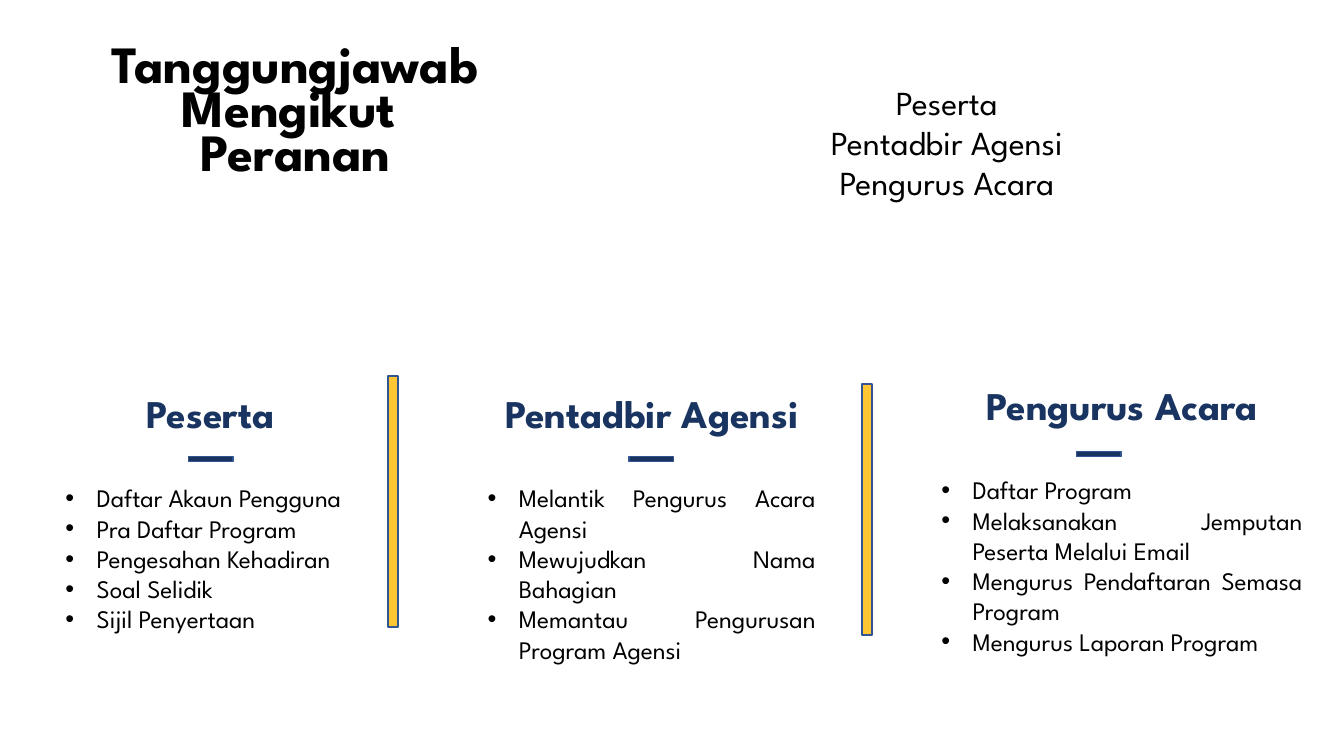
from lxml import etree
from pptx import Presentation
from pptx.dml.color import RGBColor
from pptx.enum.shapes import MSO_SHAPE
from pptx.enum.text import MSO_ANCHOR, PP_ALIGN
from pptx.oxml.ns import qn
from pptx.util import Inches, Pt

RECT = MSO_SHAPE.RECTANGLE
TOP, MIDDLE = MSO_ANCHOR.TOP, MSO_ANCHOR.MIDDLE
CENTER, JUSTIFY = PP_ALIGN.CENTER, PP_ALIGN.JUSTIFY

THEME = {
    "font": "League Spartan",
    "black": RGBColor.from_string("000000"),
    "navy": RGBColor.from_string("193460"),
    "gold": RGBColor.from_string("FFC633"),
    "edge": RGBColor.from_string("325491"),
    "title": Pt(37.4), "heading": Pt(28), "roles": Pt(24), "item": Pt(18),
}
INDENT = Inches(0.31)

prs = Presentation()
prs.slide_width, prs.slide_height = Inches(13.333), Inches(7.5)
s = prs.slides.add_slide(prs.slide_layouts[6])


def place(x, y, w, h):
    """Turn percentages of the slide into left, top, width, height."""
    W, H = prs.slide_width, prs.slide_height
    return [int(v * full / 100) for v, full in ((x, W), (y, H), (w, W), (h, H))]


def add_text(box, lines, anchor=TOP):
    """Add a text box; each line is (text, size, colour, bold, paragraph format)."""
    tf = s.shapes.add_textbox(*place(*box)).text_frame
    tf.word_wrap, tf.vertical_anchor = True, anchor
    for i, (text, size, color, bold, fmt) in enumerate(lines):
        p = tf.paragraphs[0] if i == 0 else tf.add_paragraph()
        for name, value in fmt.items():
            setattr(p, name, value)
        r = p.add_run()
        r.text = text
        for name, value in {"name": THEME["font"], "size": THEME[size], "bold": bold}.items():
            setattr(r.font, name, value)
        r.font.color.rgb = THEME[color]
    return tf


# Title and list of roles
add_text((0, 5.47, 44, 19.33),
         [(t, "title", "black", True, {"alignment": CENTER, "line_spacing": 0.7})
          for t in ("Tanggungjawab", "Mengikut ", "Peranan")], MIDDLE)
add_text((45.45, 10.13, 50, 17.47),
         [(t, "roles", "black", False, {"alignment": CENTER})
          for t in ("Peserta", "Pentadbir Agensi", "Pengurus Acara")])

# Role columns: box, left and top of the dash, heading, duties
columns = [
    ((4.13, 50.8, 23.1, 42.13), (14.03, 60.4), "Peserta",
     ["Daftar Akaun Pengguna", "Pra Daftar Program", "Pengesahan Kehadiran",
      "Soal Selidik", "Sijil Penyertaan"]),
    ((35.55, 50.8, 25.88, 42.13), (46.8, 60.4), "Pentadbir Agensi",
     ["Melantik Pengurus Acara Agensi", "Mewujudkan Nama Bahagian",
      "Memantau Pengurusan Program Agensi"]),
    ((69.3, 49.73, 28.35, 50.27), (80.1, 59.73), "Pengurus Acara",
     ["Daftar Program", "Melaksanakan Jemputan Peserta Melalui Email",
      "Mengurus Pendaftaran Semasa Program", "Mengurus Laporan Program"]),
]
bars = [((28.88, 49.73, 0.75, 33.2), "gold"), ((64.13, 50.8, 0.75, 33.2), "gold")]
for box, dash, heading, duties in columns:
    lines = [(heading, "heading", "navy", True,
              {"alignment": CENTER, "space_after": Pt(33.4)})]
    lines += [(d, "item", "black", False, {"alignment": JUSTIFY}) for d in duties]
    tf = add_text(box, lines)
    for p in tf.paragraphs[1:]:
        pPr = p._p.get_or_add_pPr()
        pPr.set("marL", str(INDENT))
        pPr.set("indent", str(-INDENT))
        etree.SubElement(pPr, qn("a:buFont")).set("typeface", "Arial")
        etree.SubElement(pPr, qn("a:buChar")).set("char", "•")
    bars.append(((*dash, 3.3, 0.67), "navy"))

# Column dividers and heading dashes
for box, color in bars:
    sp = s.shapes.add_shape(RECT, *place(*box))
    sp.shadow.inherit = False
    sp.fill.solid()
    sp.fill.fore_color.rgb = THEME[color]
    sp.line.color.rgb = THEME["edge"]
    sp.line.width = Pt(1)

prs.save("out.pptx")
